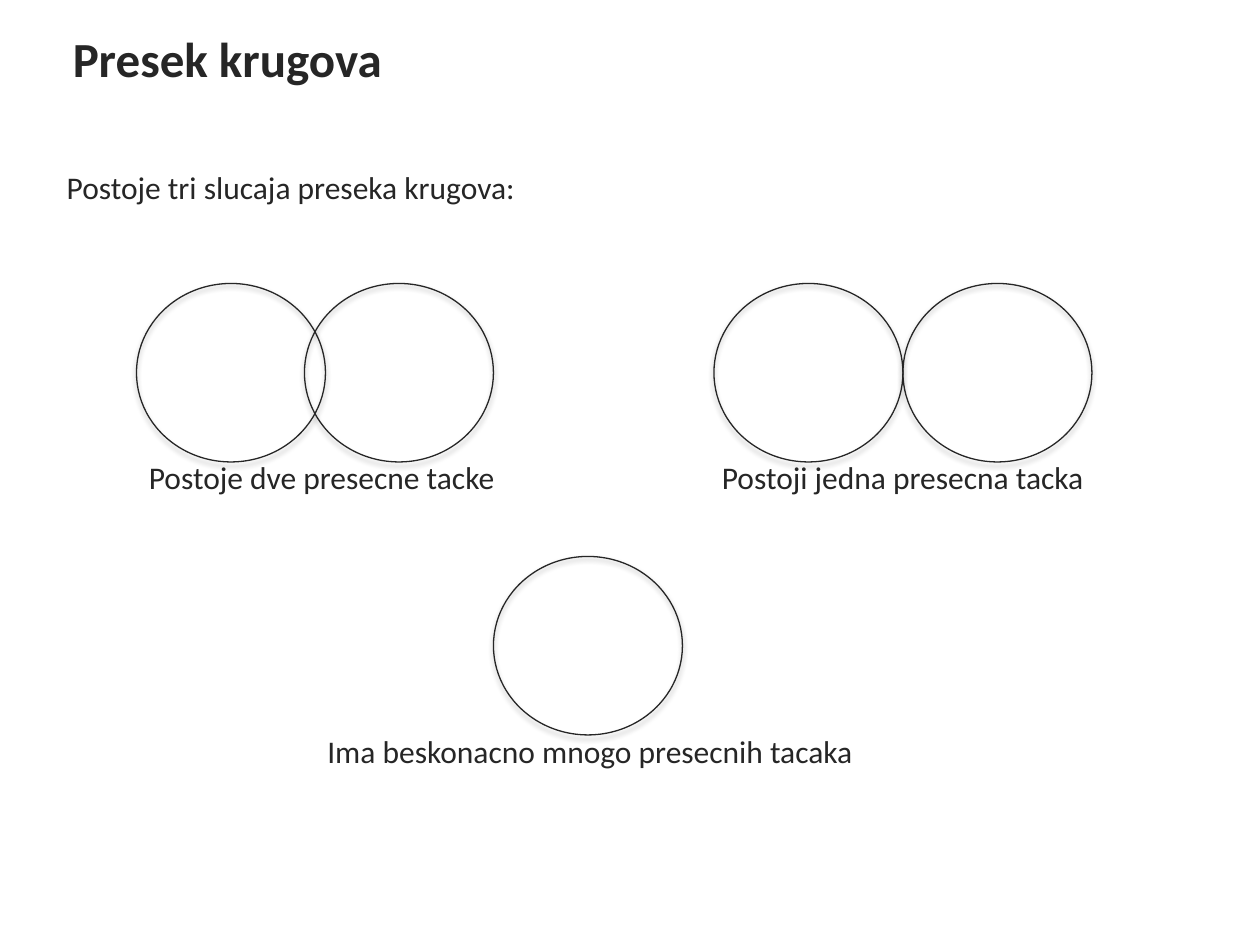
from lxml.etree import SubElement
from pptx import Presentation
from pptx.dml.color import RGBColor
from pptx.enum.shapes import MSO_SHAPE
from pptx.enum.text import MSO_ANCHOR, MSO_AUTO_SIZE
from pptx.oxml.ns import qn
from pptx.util import Pt

INK = "262626"
FONT = "Calibri"
WIDE, HIGH = 108, 102  # size of every circle
LINE = 28.8            # height of a one-line label

# Content: text, left, top, width
TITLE = ("Presek krugova", 34.5, 5.8, 661.7)
LABELS = [
    ("Postoje tri slucaja preseka krugova:", 31, 92.2, 275),
    ("Postoje dve presecne tacke", 78, 258, 216),
    ("Postoji jedna presecna tacka", 405.4, 258, 224.6),
    ("Ima beskonacno mnogo presecnih tacaka", 180, 414.6, 319.7),
]
# Cases: left, top, circles, step between circles
CASES = [
    (78, 162, 2, 96),      # two shared points
    (408, 162, 2, WIDE),   # one shared point
    (282, 318, 1, 0),      # same circle
]


def color(code):
    return RGBColor.from_string(code)


def add_text(slide, text, left, top, width, height, size, bold=False):
    box = slide.shapes.add_textbox(Pt(left), Pt(top), Pt(width), Pt(height))
    run = box.text_frame.paragraphs[0].add_run()
    run.text = text
    font = run.font
    font.name, font.size, font.bold = FONT, Pt(size), bold
    font.color.rgb = color(INK)
    return box.text_frame


def add_shadow(shape):
    shape.shadow.inherit = False
    effects = shape._element.spPr.find(qn("a:effectLst"))
    shade = SubElement(effects, qn("a:outerShdw"), blurRad=str(Pt(3.1)),
                       dist=str(Pt(1.8)), dir="5400000", rotWithShape="0")
    tone = SubElement(shade, qn("a:srgbClr"), val="000000")
    SubElement(tone, qn("a:alpha"), val="35000")


def add_circle(slide, left, top):
    shape = slide.shapes.add_shape(
        MSO_SHAPE.OVAL, Pt(left), Pt(top), Pt(WIDE), Pt(HIGH))
    shape.fill.background()
    shape.line.color.rgb = color(INK)
    shape.line.width = Pt(0.75)
    add_shadow(shape)


def main():
    deck = Presentation()
    deck.slide_width, deck.slide_height = Pt(720), Pt(540)
    slide = deck.slides.add_slide(deck.slide_layouts[6])

    # Title
    frame = add_text(slide, *TITLE, 54, 28, bold=True)
    frame.word_wrap = True
    frame.vertical_anchor = MSO_ANCHOR.MIDDLE

    # Circles of each case
    for left, top, count, step in CASES:
        for i in range(count):
            add_circle(slide, left + i * step, top)

    # Lead line and captions
    for label in LABELS:
        frame = add_text(slide, *label, LINE, 18)
        frame.word_wrap = False
        frame.auto_size = MSO_AUTO_SIZE.SHAPE_TO_FIT_TEXT

    deck.save("out.pptx")


if __name__ == "__main__":
    main()
